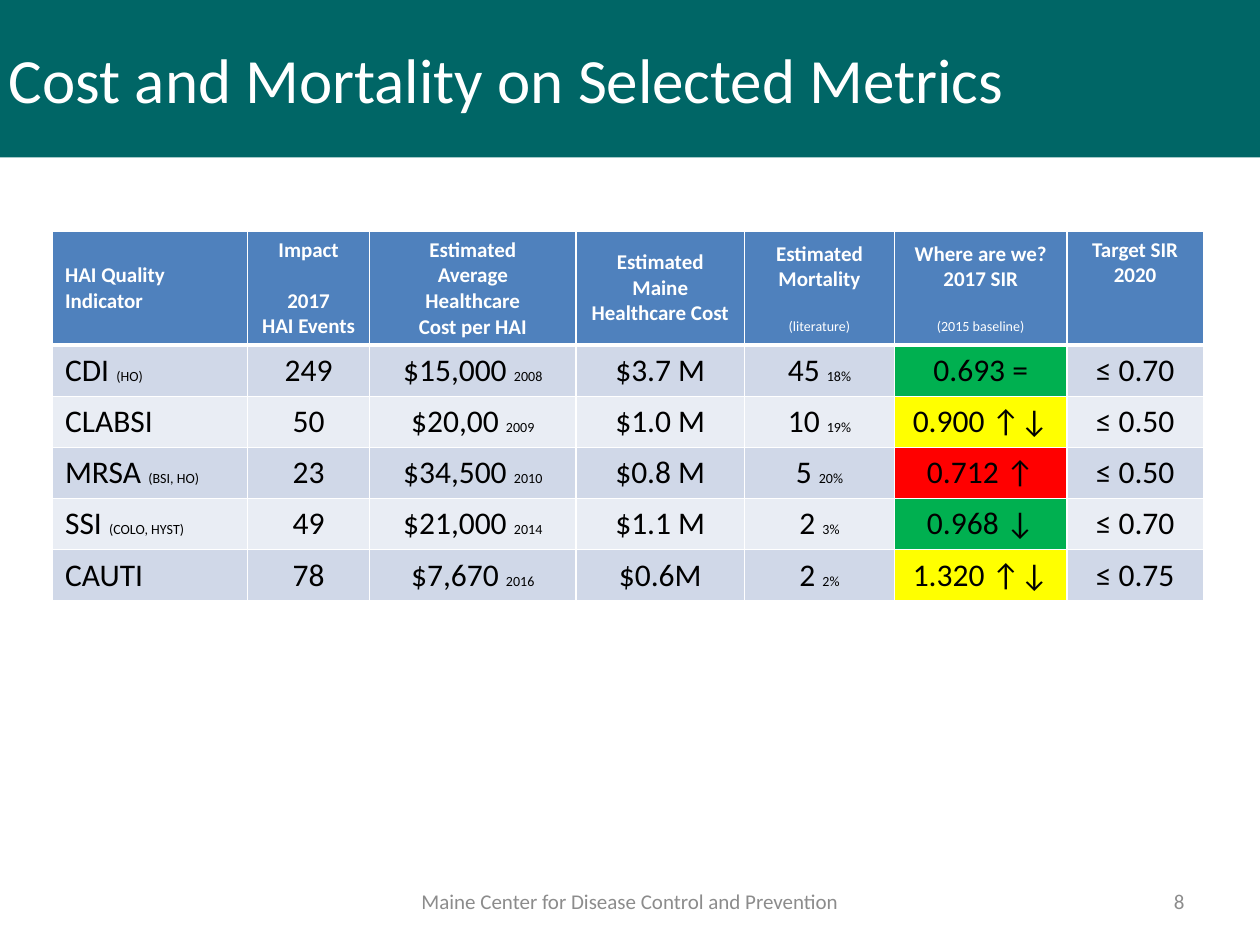
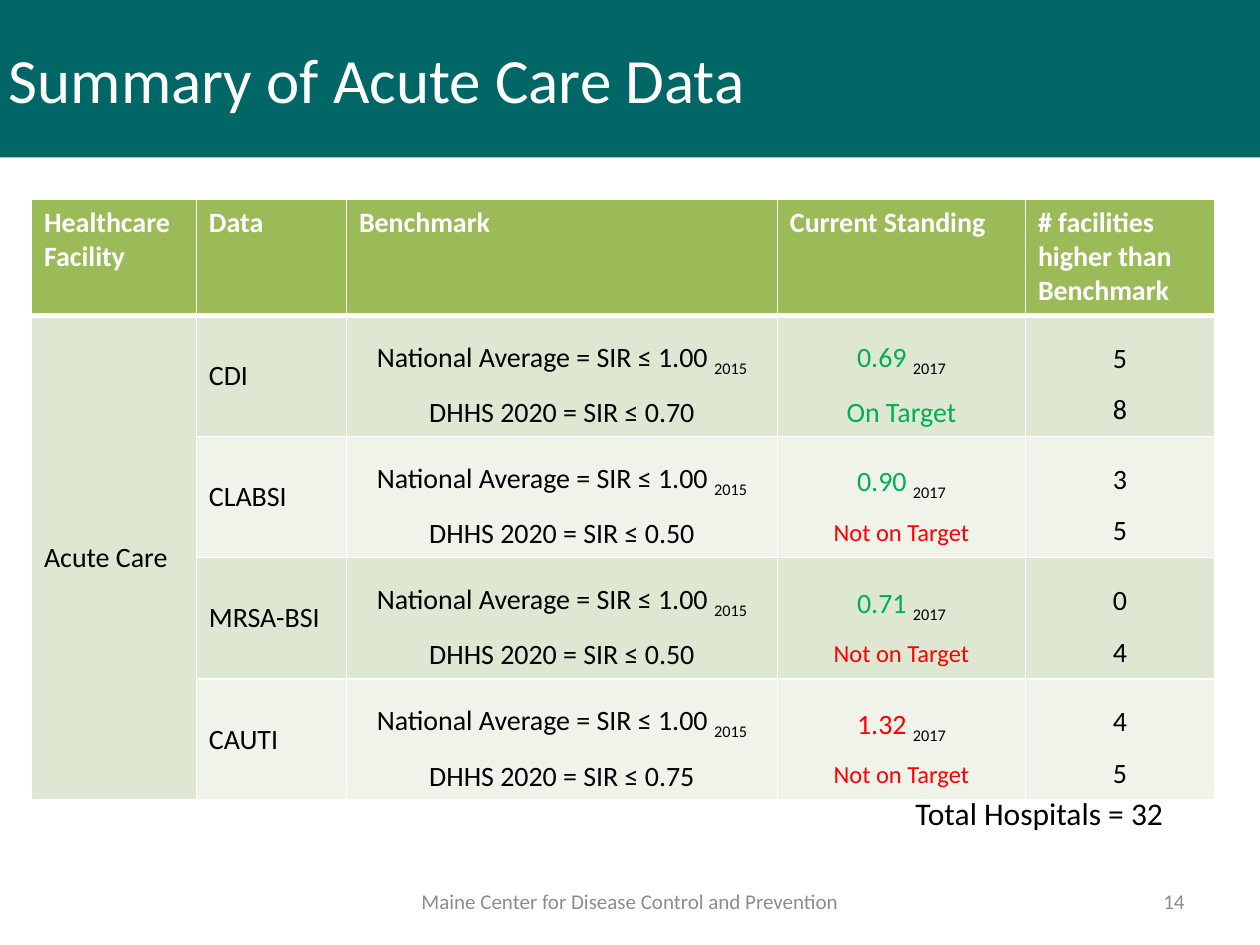
from lxml import etree
from pptx import Presentation
from pptx.dml.color import RGBColor
from pptx.enum.shapes import MSO_SHAPE
from pptx.enum.text import MSO_ANCHOR, PP_ALIGN
from pptx.oxml.ns import qn
from pptx.util import Pt

FONT = "Calibri"
TEAL = RGBColor(0x00, 0x66, 0x66)
WHITE = RGBColor(0xFF, 0xFF, 0xFF)
BLACK = RGBColor(0x00, 0x00, 0x00)
GREY = RGBColor(0x8C, 0x8C, 0x8C)
BLUE = RGBColor(0x4F, 0x81, 0xBD)
BLUE_BANDS = RGBColor(0xD0, 0xD8, 0xE8), RGBColor(0xE9, 0xED, 0xF4)
OLIVE = RGBColor(0x9B, 0xBB, 0x59)
OLIVE_BANDS = RGBColor(0xDE, 0xE7, 0xD1), RGBColor(0xEF, 0xF3, 0xEA)
GREEN = RGBColor(0x00, 0xB0, 0x50)
YELLOW = RGBColor(0xFF, 0xFF, 0x00)
RED = RGBColor(0xFF, 0x00, 0x00)


def write(frame, text, size, color, align=PP_ALIGN.LEFT, bold=False):
    """Fill a frame; a newline starts a paragraph and a bar starts a new run."""
    frame.word_wrap = True
    frame.text = text.replace("|", "")
    for paragraph, line in zip(frame.paragraphs, text.split("\n")):
        paragraph.alignment = align
        parts = line.split("|")
        paragraph.text = parts[0]
        for part in parts[1:]:
            paragraph.add_run().text = part
        for run in paragraph.runs:
            run.font.name = FONT
            run.font.size = Pt(size)
            run.font.color.rgb = color
            run.font.bold = bold


def add_ruled_table(slide, left, top, widths, heights, header_fill, bands):
    """Add a table with white rules, a header fill and alternating row fills."""
    table = slide.shapes.add_table(len(heights), len(widths), Pt(left), Pt(top),
                                   Pt(sum(widths)), Pt(sum(heights))).table
    for column, width in zip(table.columns, widths):
        column.width = Pt(width)
    for r, height in enumerate(heights):
        table.rows[r].height = Pt(height)
        for c in range(len(widths)):
            cell = table.cell(r, c)
            cell.vertical_anchor = MSO_ANCHOR.MIDDLE
            for side in ("lnL", "lnR", "lnT", "lnB"):
                heavy = (r, side) in ((0, "lnB"), (1, "lnT"))
                rule = etree.SubElement(cell._tc.get_or_add_tcPr(), qn(f"a:{side}"),
                                        w=str(Pt(3 if heavy else 1)))
                fill = etree.SubElement(rule, qn("a:solidFill"))
                etree.SubElement(fill, qn("a:srgbClr"), val=str(WHITE))
            cell.fill.solid()
            cell.fill.fore_color.rgb = bands[(r - 1) % 2] if r else header_fill
    return table


prs = Presentation()
prs.slide_width, prs.slide_height = Pt(720), Pt(540)

# Title band and footer on both slides
slides = []
for title, number in (("Cost and Mortality on Selected Metrics", "8"),
                      ("Summary of Acute Care Data", "14")):
    slide = prs.slides.add_slide(prs.slide_layouts[6])
    slides.append(slide)
    band = slide.shapes.add_shape(MSO_SHAPE.RECTANGLE, Pt(-2), 0, Pt(722), Pt(90))
    band.shadow.inherit = False
    band.fill.solid()
    band.fill.fore_color.rgb = TEAL
    band.line.fill.background()
    band.text_frame.vertical_anchor = MSO_ANCHOR.MIDDLE
    write(band.text_frame, title, 36, WHITE)
    for text, left, width, align in (
            ("Maine Center for Disease Control and Prevention", 216, 288, PP_ALIGN.CENTER),
            (number, 516, 168, PP_ALIGN.RIGHT)):
        footer = slide.shapes.add_textbox(Pt(left), Pt(500.5), Pt(width), Pt(28.75))
        footer.text_frame.vertical_anchor = MSO_ANCHOR.MIDDLE
        write(footer.text_frame, text, 12, GREY, align)
cost_slide, summary_slide = slides

# Cost and mortality
cost_headers = ["HAI Quality Indicator", "Impact\n2017\nHAI Events",
                "Estimated\nAverage\nHealthcare\nCost per HAI",
                "Estimated\nMaine Healthcare Cost",
                "Estimated\nMortality\n(literature)",
                "Where are we?\n2017 SIR\n(2015 baseline)", "Target SIR\n2020"]
cost_rows = [
    ["CDI |(HO)", "249", "$15,000 |2008", "$3.7 M", "45 |18%", "0.693 =", "≤ 0.70"],
    ["CLABSI", "50", "$20,00 |2009", "$1.0 M", "10 |19%", "0.900 ↑↓", "≤ 0.50"],
    ["MRSA |(BSI, HO)", "23", "$34,500 |2010", "$0.8 M", "5 |20%", "0.712 ↑", "≤ 0.50"],
    ["SSI |(COLO, HYST)", "49", "$21,000 |2014", "$1.1 M", "2 |3%", "0.968 ↓", "≤ 0.70"],
    ["CAUTI", "78", "$7,670 |2016", "$0.6M", "2 |2%", "1.320 ↑↓", "≤ 0.75"],
]
sir_fills = [GREEN, YELLOW, RED, GREEN, YELLOW]
costs = add_ruled_table(cost_slide, 30, 132, [111.5, 69.75, 118, 96.25, 85.75, 98.5, 78],
                        [65.25] + [29.25] * 5, BLUE, BLUE_BANDS)
for c, header in enumerate(cost_headers):
    align = PP_ALIGN.CENTER if c else PP_ALIGN.LEFT
    write(costs.cell(0, c).text_frame, header, 12, WHITE, align, bold=True)
    for r, row in enumerate(cost_rows, 1):
        frame = costs.cell(r, c).text_frame
        write(frame, row[c], 18, BLACK, align)
        for qualifier in frame.paragraphs[0].runs[1:]:
            qualifier.font.size = Pt(8)
for r, sir_fill in enumerate(sir_fills, 1):
    costs.cell(r, 5).fill.fore_color.rgb = sir_fill
    costs.cell(r, 0).vertical_anchor = MSO_ANCHOR.TOP
costs.cell(0, 6).vertical_anchor = MSO_ANCHOR.TOP
costs.cell(0, 1).text_frame.paragraphs[1].space_before = Pt(14.5)
for c in (4, 5):
    source_note = costs.cell(0, c).text_frame.paragraphs[2]
    source_note.space_before = Pt(14.5)
    source_note.runs[0].font.size = Pt(8)
    source_note.runs[0].font.bold = False

# Acute care summary
summary_headers = ["Healthcare\nFacility", "Data", "Benchmark", "Current Standing",
                   "# facilities higher than Benchmark"]
standings = [  # measure, 2020 goal, SIR, SIR colour, on target, facilities above each benchmark
    ("CDI", "0.70", "0.69", GREEN, True, "5\n8"),
    ("CLABSI", "0.50", "0.90", GREEN, False, "3\n5"),
    ("MRSA-BSI", "0.50", "0.71", GREEN, False, "0\n4"),
    ("CAUTI", "0.75", "1.32", RED, False, "4\n5"),
]
summary = add_ruled_table(summary_slide, 18, 114, [94.25, 85.75, 246.25, 141.75, 108],
                          [66.25] + [69.25] * 4, OLIVE, OLIVE_BANDS)
for c, header in enumerate(summary_headers):
    summary.cell(0, c).vertical_anchor = MSO_ANCHOR.TOP
    write(summary.cell(0, c).text_frame, header, 16, WHITE, bold=True)
summary.cell(1, 0).merge(summary.cell(4, 0))
write(summary.cell(1, 0).text_frame, "Acute Care", 16, BLACK)
for r, (measure, goal, sir, sir_color, on_target, facilities) in enumerate(standings, 1):
    write(summary.cell(r, 1).text_frame, measure, 16, BLACK)
    verdict = "On Target" if on_target else "Not on Target"
    for c, text in enumerate((f"National Average = SIR ≤ 1.00 |2015\nDHHS 2020 = SIR ≤ {goal}",
                              f"{sir} |2017\n{verdict}", facilities), 2):
        frame = summary.cell(r, c).text_frame
        write(frame, text, 16, BLACK, PP_ALIGN.CENTER)
        for paragraph in frame.paragraphs:
            paragraph.line_spacing = 1.5
            for year in paragraph.runs[1:]:
                year._r.get_or_add_rPr().set("baseline", "-25000")
    sir_line, verdict_line = summary.cell(r, 3).text_frame.paragraphs
    sir_line.runs[0].font.color.rgb = sir_color
    verdict_font = verdict_line.runs[0].font
    verdict_font.color.rgb = GREEN if on_target else RED
    verdict_font.size = Pt(16 if on_target else 14)

total = summary_slide.shapes.add_textbox(Pt(516), Pt(450), Pt(168), Pt(29))
write(total.text_frame, "Total Hospitals = 32", 18, BLACK)

prs.save("out.pptx")
